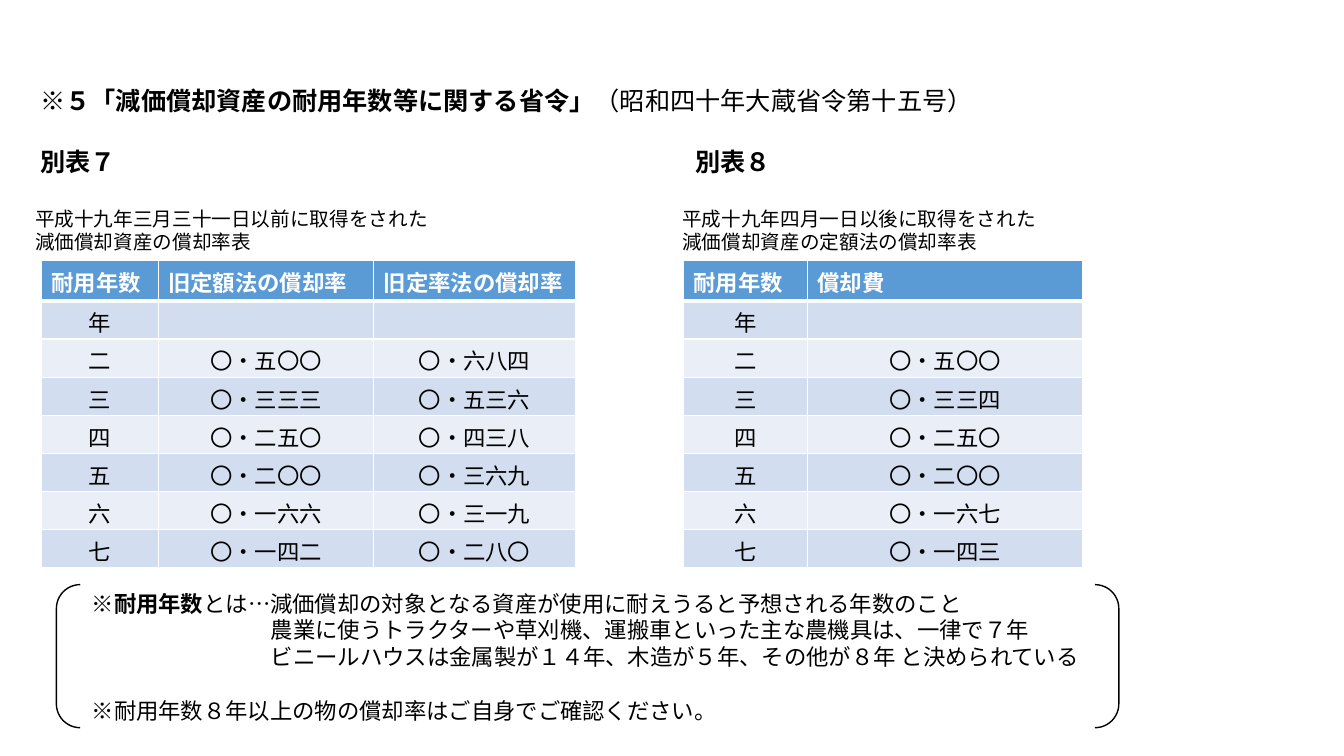
import pptx
import pptx.util
import pptx.dml.color
import pptx.enum.shapes
import pptx.enum.text
import pptx.oxml
import pptx.oxml.ns
from lxml import etree

Pt = pptx.util.Pt
RGB = pptx.dml.color.RGBColor
qn = pptx.oxml.ns.qn

FONT = "Noto Sans CJK JP"
BLACK = RGB(0x00, 0x00, 0x00)
WHITE = RGB(0xFF, 0xFF, 0xFF)
HEADER = RGB(0x5B, 0x9B, 0xD5)
BANDS = [RGB(0xD2, 0xDE, 0xEF), RGB(0xEA, 0xEF, 0xF7)]

TITLE = [("※５「減価償却資産の耐用年数等に関する省令」", True), ("（昭和四十年大蔵省令第十五号）", False)]
YEARS = ["年", "二", "三", "四", "五", "六", "七"]
SCHEDULES = [
    {
        "label": "別表７", "label_x": 28.8, "caption_x": 25, "table_x": 29.5,
        "caption": ["平成十九年三月三十一日以前に取得をされた", "減価償却資産の償却率表"],
        "widths": [83.5, 154, 144],
        "header": ["耐用年数", "旧定額法の償却率", "旧定率法の償却率"],
        "rates": [
            ["", "〇・五〇〇", "〇・三三三", "〇・二五〇", "〇・二〇〇", "〇・一六六", "〇・一四二"],
            ["", "〇・六八四", "〇・五三六", "〇・四三八", "〇・三六九", "〇・三一九", "〇・二八〇"],
        ],
    },
    {
        "label": "別表８", "label_x": 496.8, "caption_x": 487.4, "table_x": 488.2,
        "caption": ["平成十九年四月一日以後に取得をされた", "減価償却資産の定額法の償却率表"],
        "widths": [88.5, 196.5],
        "header": ["耐用年数", "償却費"],
        "rates": [["", "〇・五〇〇", "〇・三三四", "〇・二五〇", "〇・二〇〇", "〇・一六七", "〇・一四三"]],
    },
]
NOTES = [
    ([("※", False), ("耐用年数", True),
      ("とは…減価償却の対象となる資産が使用に耐えうると予想される年数のこと", False)], 0, 0),
    ([("農業に使うトラクターや草刈機、運搬車といった主な農機具は、一律で７年", False)], 128, 0),
    ([("ビニールハウスは金属製が１４年、木造が５年、その他が８年 と決められている", False)], 128, 0),
    ([("※耐用年数８年以上の物の償却率はご自身でご確認ください。", False)], 0, 19),
]
TABLE_TOP, HEADER_H, ROW_H = 186.2, 28.8, 27.2


def add_text(p, text, size=16, bold=False, color=BLACK):
    if not text:
        etree.SubElement(p._p, qn("a:endParaRPr"), sz=str(size * 100))
        return
    r = p.add_run()
    r.text = text
    r.font.size = Pt(size)
    r.font.bold = bold
    r.font.color.rgb = color
    r.font.name = FONT
    etree.SubElement(r._r.get_or_add_rPr(), qn("a:ea"), typeface=FONT)


def set_frame(tf):
    tf.margin_left = tf.margin_right = tf.margin_top = tf.margin_bottom = 0
    tf.word_wrap = True
    tf.auto_size = pptx.enum.text.MSO_AUTO_SIZE.NONE
    tf.vertical_anchor = pptx.enum.text.MSO_ANCHOR.TOP
    return tf


def add_box(s, x, y, w, h):
    return set_frame(s.shapes.add_textbox(Pt(x), Pt(y), Pt(w), Pt(h)).text_frame)


def add_lines(tf, lines, **fmt):
    for i, line in enumerate(lines):
        p = tf.paragraphs[0] if i == 0 else tf.add_paragraph()
        add_text(p, line, **fmt)


def style_cell(cell, fill, bottom):
    cell.margin_top, cell.margin_bottom = Pt(3.6), 0
    tcPr = cell._tc.get_or_add_tcPr()
    for side, width in (("L", 1), ("R", 1), ("T", 1), ("B", bottom)):
        ln = etree.SubElement(tcPr, qn("a:ln" + side), w=str(Pt(width)))
        solid = etree.SubElement(ln, qn("a:solidFill"))
        etree.SubElement(solid, qn("a:srgbClr"), val=str(WHITE))
    cell.fill.solid()
    cell.fill.fore_color.rgb = fill


def add_rate_table(s, schedule):
    rows = [schedule["header"], *zip(YEARS, *schedule["rates"])]
    widths = schedule["widths"]
    height = HEADER_H + ROW_H * len(YEARS)
    table = s.shapes.add_table(len(rows), len(widths), Pt(schedule["table_x"]), Pt(TABLE_TOP),
                               Pt(sum(widths)), Pt(height)).table
    for column, width in zip(table.columns, widths):
        column.width = Pt(width)
    for i, values in enumerate(rows):
        table.rows[i].height = Pt(ROW_H if i else HEADER_H)
        for j, value in enumerate(values):
            cell = table.cell(i, j)
            p = cell.text_frame.paragraphs[0]
            if i:
                p.alignment = pptx.enum.text.PP_ALIGN.CENTER
                add_text(p, value)
                style_cell(cell, BANDS[(i - 1) % 2], 1)
            else:
                add_text(p, value, bold=True, color=WHITE)
                style_cell(cell, HEADER, 3)


def main():
    prs = pptx.Presentation()
    prs.slide_width, prs.slide_height = Pt(960), Pt(540)
    s = prs.slides.add_slide(prs.slide_layouts[5])

    title = s.shapes.title
    title.left, title.top, title.width, title.height = Pt(28.8), Pt(61.2), Pt(900), Pt(26)
    p = set_frame(title.text_frame).paragraphs[0]
    p.alignment = pptx.enum.text.PP_ALIGN.LEFT
    for text, bold in TITLE:
        add_text(p, text, size=18, bold=bold)

    for schedule in SCHEDULES:
        add_lines(add_box(s, schedule["label_x"], 104.5, 120, 26), [schedule["label"]], size=18, bold=True)
        add_lines(add_box(s, schedule["caption_x"], 147.6, 320, 36), schedule["caption"], size=14)
        add_rate_table(s, schedule)

    tf = add_box(s, 65.5, 421.2, 730, 98)
    for i, (runs, indent, before) in enumerate(NOTES):
        p = tf.paragraphs[0] if i == 0 else tf.add_paragraph()
        p._p.get_or_add_pPr().set("marL", str(Pt(indent)))
        p.space_before = Pt(before)
        for text, bold in runs:
            add_text(p, text, bold=bold)

    bracket = s.shapes.add_shape(pptx.enum.shapes.MSO_SHAPE.DOUBLE_BRACKET,
                                 Pt(40.3), Pt(417.6), Pt(758.9), Pt(102.2))
    bracket.shadow.inherit = False
    bracket.fill.background()
    bracket.line.color.rgb = BLACK
    bracket.line.width = Pt(1)

    prs.save("out.pptx")


if __name__ == "__main__":
    main()
